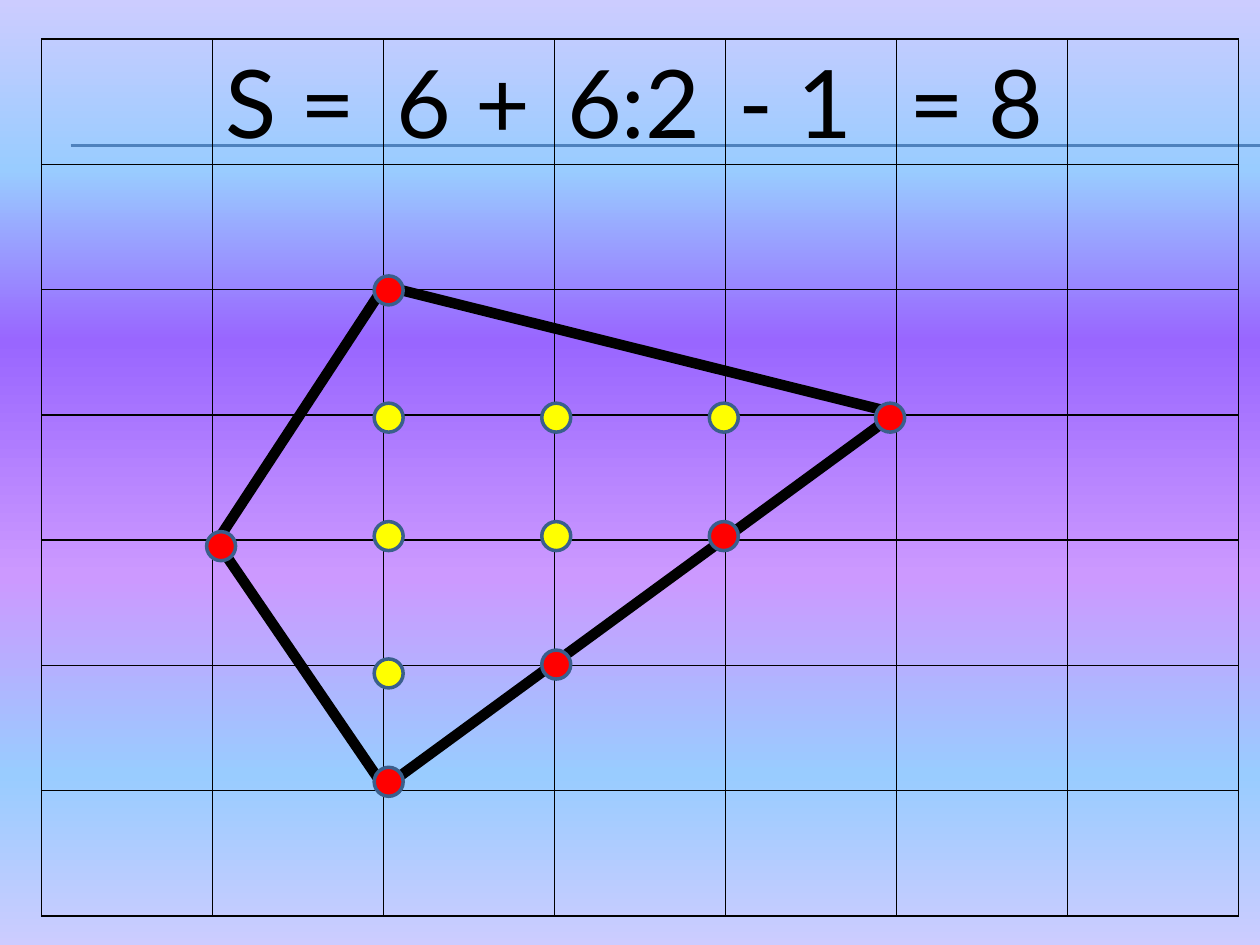
from lxml.etree import SubElement
from pptx import Presentation
from pptx.dml.color import RGBColor
from pptx.enum.shapes import MSO_CONNECTOR, MSO_SHAPE
from pptx.oxml.ns import qn
from pptx.util import Inches, Pt

BLACK = RGBColor(0x00, 0x00, 0x00)
RED = RGBColor(0xFF, 0x00, 0x00)
YELLOW = RGBColor(0xFF, 0xFF, 0x00)
RULE = RGBColor(0x4F, 0x81, 0xBD)
RIM = RGBColor(0x3A, 0x5F, 0x8C)
LILAC = RGBColor(0xCC, 0xCC, 0xFF)
SKY = RGBColor(0x99, 0xCC, 0xFF)
VIOLET = RGBColor(0x99, 0x66, 0xFF)
ORCHID = RGBColor(0xCC, 0x99, 0xFF)

STOPS = [(0, LILAC), (18, SKY), (36, VIOLET), (61, ORCHID), (82, SKY), (100, LILAC)]
SIZE = 7  # grid rows and columns
TERMS = ["S =", "6 +", "6:2", "- 1", "= 8"]
DOT = 0.23

# Corners of the polygon, in drawing order
CORNERS = [(1.72, 4.3), (3.05, 2.27), (7.11, 3.28), (3.05, 6.25)]

# Left and top of each lattice dot
COLS = [1.64, 2.97, 4.3, 5.63, 6.95]
INNER = [(COLS[1], 3.2), (COLS[2], 3.2), (COLS[3], 3.2),
         (COLS[1], 4.14), (COLS[2], 4.14), (COLS[1], 5.23)]
EDGE = [(COLS[0], 4.22), (COLS[1], 2.19), (COLS[4], 3.2),
        (COLS[3], 4.14), (COLS[2], 5.16), (COLS[1], 6.09)]


def add_solid(parent, color):
    fill = SubElement(parent, qn("a:solidFill"))
    SubElement(fill, qn("a:srgbClr"), val=str(color))


def paint_back(slide):
    fill = slide.background.fill
    fill.gradient()
    grad = slide.background._cSld.find(".//" + qn("a:gradFill"))
    for child in list(grad):
        grad.remove(child)
    stops = SubElement(grad, qn("a:gsLst"))
    for pos, color in STOPS:
        stop = SubElement(stops, qn("a:gs"), pos=str(pos * 1000))
        SubElement(stop, qn("a:srgbClr"), val=str(color))
    SubElement(grad, qn("a:lin"), ang="5400000", scaled="0")


def add_line(slide, start, end, color, width):
    ends = [Inches(v) for v in (*start, *end)]
    line = slide.shapes.add_connector(MSO_CONNECTOR.STRAIGHT, *ends)
    line.line.color.rgb = color
    line.line.width = Pt(width)
    SubElement(line._element.spPr, qn("a:effectLst"))


def add_dot(slide, left, top, color):
    dot = slide.shapes.add_shape(MSO_SHAPE.OVAL, Inches(left), Inches(top),
                                 Inches(DOT), Inches(DOT))
    dot.shadow.inherit = False
    dot.fill.solid()
    dot.fill.fore_color.rgb = color
    dot.line.color.rgb = RIM
    dot.line.width = Pt(2)


def style_cell(cell):
    # Borders come before the fill in the cell properties
    props = cell._tc.get_or_add_tcPr()
    for side in ("lnL", "lnR", "lnT", "lnB"):
        add_solid(SubElement(props, qn("a:" + side), w=str(Pt(1))), BLACK)
    cell.fill.background()
    cell.margin_bottom = Inches(0.04)


def add_grid(slide):
    frame = slide.shapes.add_table(SIZE, SIZE, Inches(0.33), Inches(0.31),
                                   Inches(9.5), Inches(6.96))
    table = frame.table
    table.first_row = False
    table.horz_banding = False
    for cell in table.iter_cells():
        style_cell(cell)
    for col, term in enumerate(TERMS, 1):
        para = table.cell(0, col).text_frame.paragraphs[0]
        para.text = term
        para.font.name = "Lato"
        para.font.size = Pt(54)
        para.font.color.rgb = BLACK


def main():
    deck = Presentation()
    deck.slide_width = Inches(10)
    deck.slide_height = Inches(7.5)
    slide = deck.slides.add_slide(deck.slide_layouts[6])
    paint_back(slide)

    # Title rule
    for top in (1.15, 1.16):
        add_line(slide, (0.56, top), (10, top), RULE, 0.75)

    # Grid with the formula in its first row
    add_grid(slide)

    # Polygon
    for start, end in zip(CORNERS, CORNERS[1:] + CORNERS[:1]):
        add_line(slide, start, end, BLACK, 6)

    # Lattice dots inside and on the edge
    for dots, color in ((INNER, YELLOW), (EDGE, RED)):
        for left, top in dots:
            add_dot(slide, left, top, color)

    deck.save("out.pptx")


if __name__ == "__main__":
    main()
